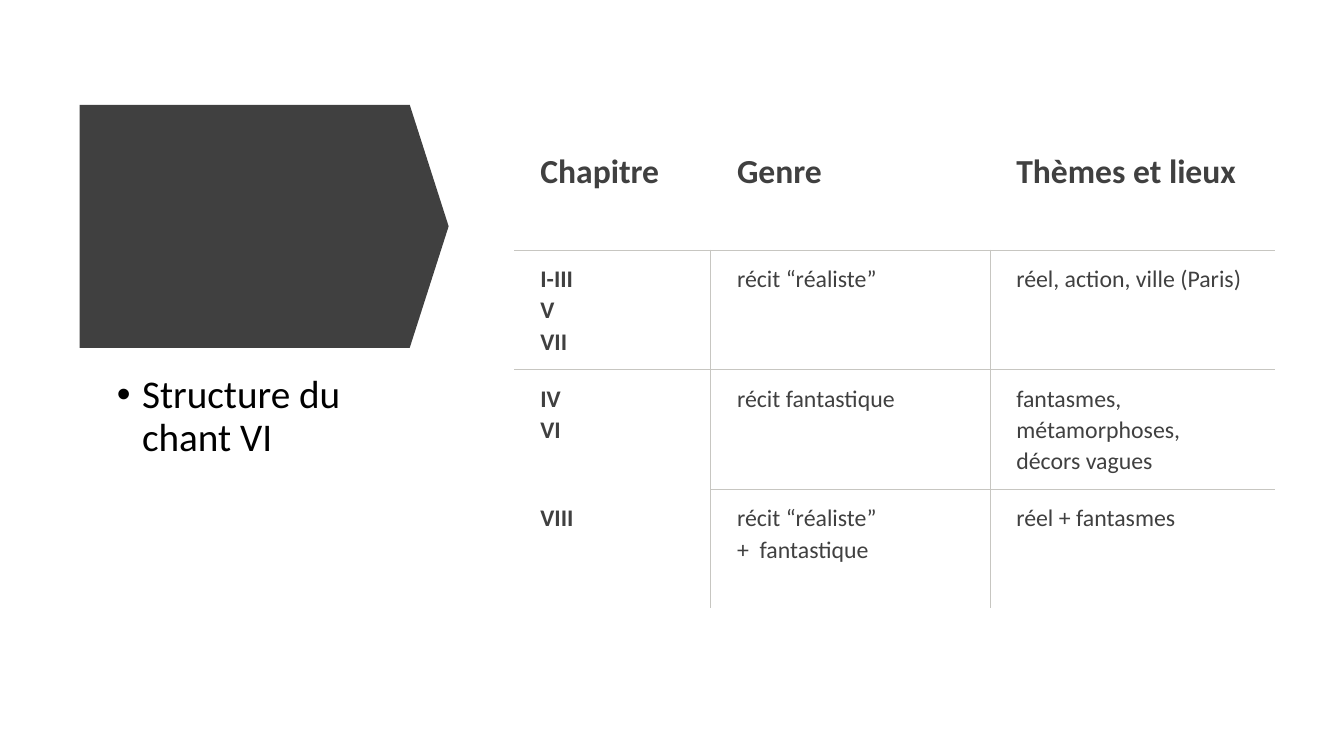
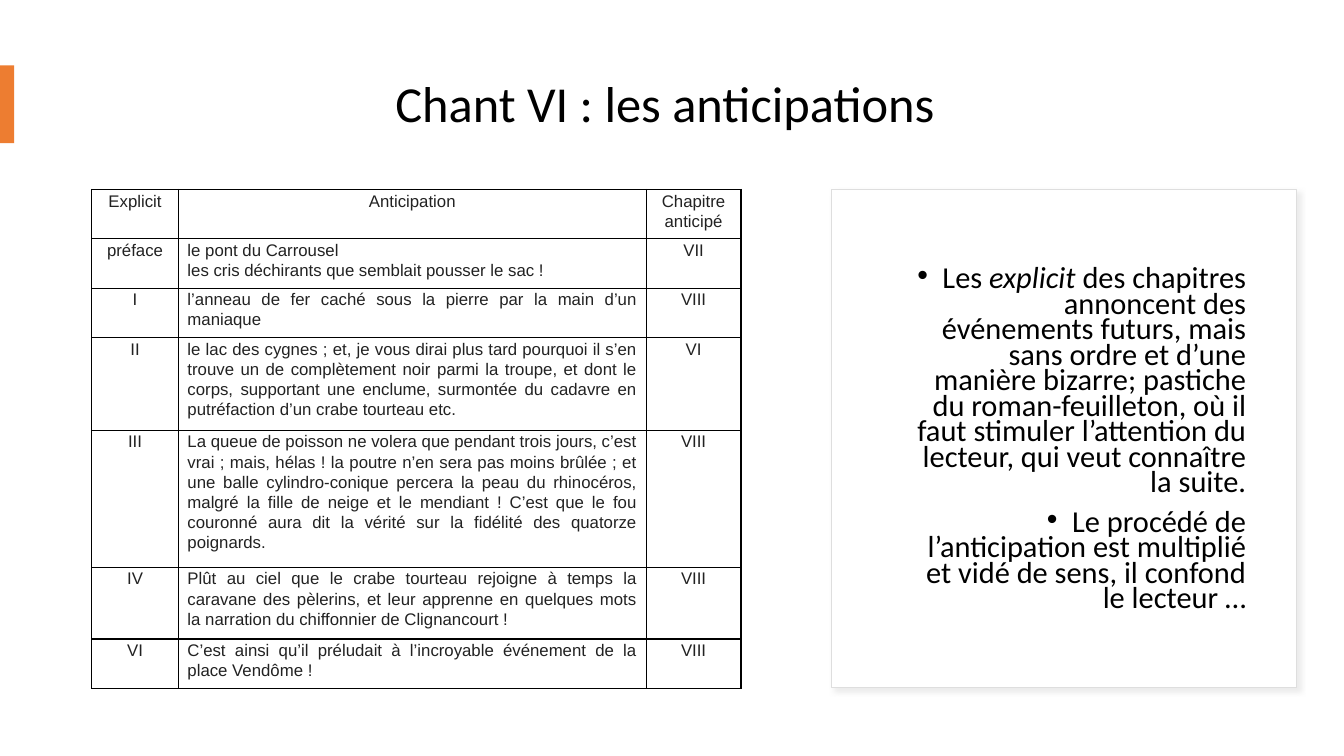
from lxml import etree
from pptx import Presentation
from pptx.dml.color import RGBColor
from pptx.enum.shapes import MSO_SHAPE
from pptx.enum.text import MSO_ANCHOR, MSO_AUTO_SIZE, PP_ALIGN
from pptx.oxml.ns import qn
from pptx.util import Inches, Pt

LEFT, CENTER, RIGHT, JUSTIFY = PP_ALIGN.LEFT, PP_ALIGN.CENTER, PP_ALIGN.RIGHT, PP_ALIGN.JUSTIFY
TOP, MIDDLE = MSO_ANCHOR.TOP, MSO_ANCHOR.MIDDLE
PLAIN_TABLE = "{2D5ABB26-0587-4C30-8999-92F81FD0307C}"

COLORS = {"black": "000000", "white": "FFFFFF", "dark": "404040", "ink": "222222",
          "rule": "C7C6C1", "accent": "ED7D31", "frame": "DEDEDE", "shadow": "D9D9D9"}

# Content: a cell's lines are separated by newlines, a paragraph is a list of (text, italic)
STRUCTURE = ["Structure du chant VI"]
CHAPTERS = [
    ("Chapitre", "Genre", "Thèmes et lieux"),
    ("I-III\nV\nVII", "récit “réaliste”", "réel, action, ville (Paris)"),
    ("IV\nVI", "récit fantastique", "fantasmes,  métamorphoses,\ndécors vagues"),
    ("VIII", "récit “réaliste”\n+  fantastique", "réel + fantasmes"),
]
TITLE = "Chant VI : les anticipations"
ANTICIPATIONS = [
    ("Explicit", "Anticipation", "Chapitre anticipé"),
    ("préface", "le pont du Carrousel\nles cris déchirants que semblait pousser le sac !", "VII"),
    ("I", "l’anneau de fer caché sous la pierre par la main d’un maniaque", "VIII"),
    ("II", "le lac des cygnes ; et, je vous dirai plus tard pourquoi il s’en trouve un de "
           "complètement noir parmi la troupe, et dont le corps, supportant une enclume, "
           "surmontée du cadavre en putréfaction d’un crabe tourteau etc.", "VI"),
    ("III", "La queue de poisson ne volera que pendant trois jours, c’est vrai ; mais, hélas ! "
            "la poutre n’en sera pas moins brûlée ; et une balle cylindro-conique percera la peau "
            "du rhinocéros, malgré la fille de neige et le mendiant ! C’est que le fou couronné "
            "aura dit la vérité sur la fidélité des quatorze poignards.", "VIII"),
    ("IV", "Plût au ciel que le crabe tourteau rejoigne à temps la caravane des pèlerins, et leur "
           "apprenne en quelques mots la narration du chiffonnier de Clignancourt !", "VIII"),
    ("VI", "C’est ainsi qu’il préludait à l’incroyable événement de la place Vendôme !", "VIII"),
]
COMMENTS = [
    [("Les ", False), ("explicit ", True),
     ("des chapitres annoncent des événements futurs, mais sans ordre et d’une manière bizarre; "
      "pastiche du roman-feuilleton, où il faut stimuler l’attention du lecteur, qui veut "
      "connaître la suite.", False)],
    [("Le procédé de l’anticipation est multiplié et vidé de sens, il confond le lecteur …", False)],
]


def color(name):
    return RGBColor.from_string(COLORS[name])


def write(para, spans, size, font="Calibri", ink="black", bold=False, **layout):
    for name, value in layout.items():
        setattr(para, name, value)
    for text, italic in spans:
        span = para.add_run()
        span.text = text
        for name, value in {"size": Pt(size), "name": font, "bold": bold, "italic": italic}.items():
            setattr(span.font, name, value)
        span.font.color.rgb = color(ink)


def fill_frame(frame, paragraphs, **look):
    for index, spans in enumerate(paragraphs):
        para = frame.add_paragraph() if index else frame.paragraphs[0]
        write(para, [(spans, False)] if isinstance(spans, str) else spans, **look)


def place(box, left, top, width, height):
    box.left, box.top, box.width, box.height = map(Inches, (left, top, width, height))


def fill_placeholder(box, at, paragraphs, anchor, bullets=False, **look):
    place(box, *at)
    frame = box.text_frame
    frame.word_wrap, frame.auto_size, frame.vertical_anchor = True, MSO_AUTO_SIZE.NONE, anchor
    fill_frame(frame, paragraphs, **look)
    if bullets:
        for para in frame.paragraphs:
            para.space_before = Pt(10)
            props = para._p.get_or_add_pPr()
            props.set("marL", str(Inches(0.25)))
            props.set("indent", str(Inches(-0.25)))


def add_panel(page, kind, at, fill, line=None):
    panel = page.shapes.add_shape(kind, *map(Inches, at))
    panel.fill.solid()
    panel.fill.fore_color.rgb = color(fill)
    if line:
        panel.line.color.rgb = color(line)
        panel.line.width = Pt(0.75)
    else:
        panel.line.fill.background()
    panel.shadow.inherit = False
    return panel


def add_soft_shadow(panel):
    effects = panel._element.spPr.find(qn("a:effectLst"))
    shadow = etree.SubElement(effects, qn("a:outerShdw"), blurRad=str(Pt(4)), dist=str(Pt(3)),
                              dir=str(45 * 60000), algn="tl", rotWithShape="0")
    tint = etree.SubElement(shadow, qn("a:srgbClr"), val=COLORS["shadow"])
    etree.SubElement(tint, qn("a:alpha"), val="50000")


def set_borders(cell, sides, ink, width):
    props = cell._tc.get_or_add_tcPr()
    for side in "LRTB":
        if side in sides:
            line = etree.SubElement(props, qn("a:ln" + side), w=str(Pt(width)))
            solid = etree.SubElement(line, qn("a:solidFill"))
            etree.SubElement(solid, qn("a:srgbClr"), val=COLORS[ink])


def add_grid(page, at, widths, heights, rows, insets, border, sides_of, look_of):
    """Draw a table; sides_of and look_of give borders and text look by row and column."""
    table_frame = page.shapes.add_table(len(rows), len(widths), *map(Inches, at),
                                        Inches(sum(widths)), Inches(sum(heights)))
    table = table_frame.table
    table._tbl.tblPr.find(qn("a:tableStyleId")).text = PLAIN_TABLE
    table.first_row = table.horz_banding = False
    for column, width in zip(table.columns, widths):
        column.width = Inches(width)
    for r, (row, height) in enumerate(zip(rows, heights)):
        table.rows[r].height = Inches(height)
        for c, text in enumerate(row):
            cell = table.cell(r, c)
            for side, inset in zip(("left", "top", "right", "bottom"), insets):
                setattr(cell, "margin_" + side, Inches(inset))
            set_borders(cell, sides_of(r, c), *border)
            cell.fill.background()
            fill_frame(cell.text_frame, text.split("\n"), line_spacing=1.07, **look_of(r, c))


def chapter_sides(r, c):
    last = len(CHAPTERS) - 1
    if r == 0:
        return "B"
    if c == 0:
        return "RT" if r == 1 else "R"
    return "T" + ("L" if c == 1 else "") + ("B" if r < last else "")


def chapter_look(r, c):
    return {"size": 17 if r else 24, "ink": "dark", "bold": r == 0 or c == 0, "alignment": JUSTIFY}


def anticipation_look(r, c):
    return {"size": 12, "font": "Arial", "ink": "ink",
            "alignment": JUSTIFY if r and c == 1 else CENTER}


def build_structure(page):
    title, body = page.placeholders
    title._element.getparent().remove(title._element)
    banner = add_panel(page, MSO_SHAPE.PENTAGON, (0.79, 1.04, 3.66, 2.41), "dark")
    banner.adjustments[0] = 0.16
    fill_placeholder(body, (1.06, 3.67, 2.92, 2.65), STRUCTURE, TOP, bullets=True,
                     size=28, line_spacing=0.9, alignment=LEFT)
    add_grid(page, (5.1, 1.35), (1.95, 2.77, 2.83), (1.13, 1.18, 1.18, 1.18), CHAPTERS,
             (0.26, 0.13, 0.2, 0.13), ("rule", 0.75), chapter_sides, chapter_look)


def build_anticipations(page):
    title, body = page.placeholders
    fill_placeholder(title, (0.47, 0.45, 12.25, 1.21), [TITLE], MIDDLE,
                     size=36, line_spacing=0.9, alignment=CENTER)
    add_panel(page, MSO_SHAPE.RECTANGLE, (0, 0.65, 0.14, 0.77), "accent")
    card = add_panel(page, MSO_SHAPE.RECTANGLE, (8.25, 1.88, 4.61, 4.94), "white", "frame")
    add_soft_shadow(card)
    card._element.addnext(body._element)  # text above its card
    fill_placeholder(body, (8.68, 2.21, 3.78, 4.33), COMMENTS, MIDDLE, bullets=True,
                     size=21.7, line_spacing=0.7, alignment=RIGHT)
    add_grid(page, (0.91, 1.88), (0.86, 4.64, 0.94), (0.49, 0.49, 0.49, 0.92, 1.36, 0.71, 0.49),
             ANTICIPATIONS, (0.09, 0.01, 0.09, 0), ("black", 1),
             lambda r, c: "LRTB", anticipation_look)


def main():
    deck = Presentation()
    deck.slide_width, deck.slide_height = Inches(13.33), Inches(7.5)
    for build in (build_structure, build_anticipations):
        build(deck.slides.add_slide(deck.slide_layouts[1]))
    deck.save("out.pptx")


if __name__ == "__main__":
    main()
